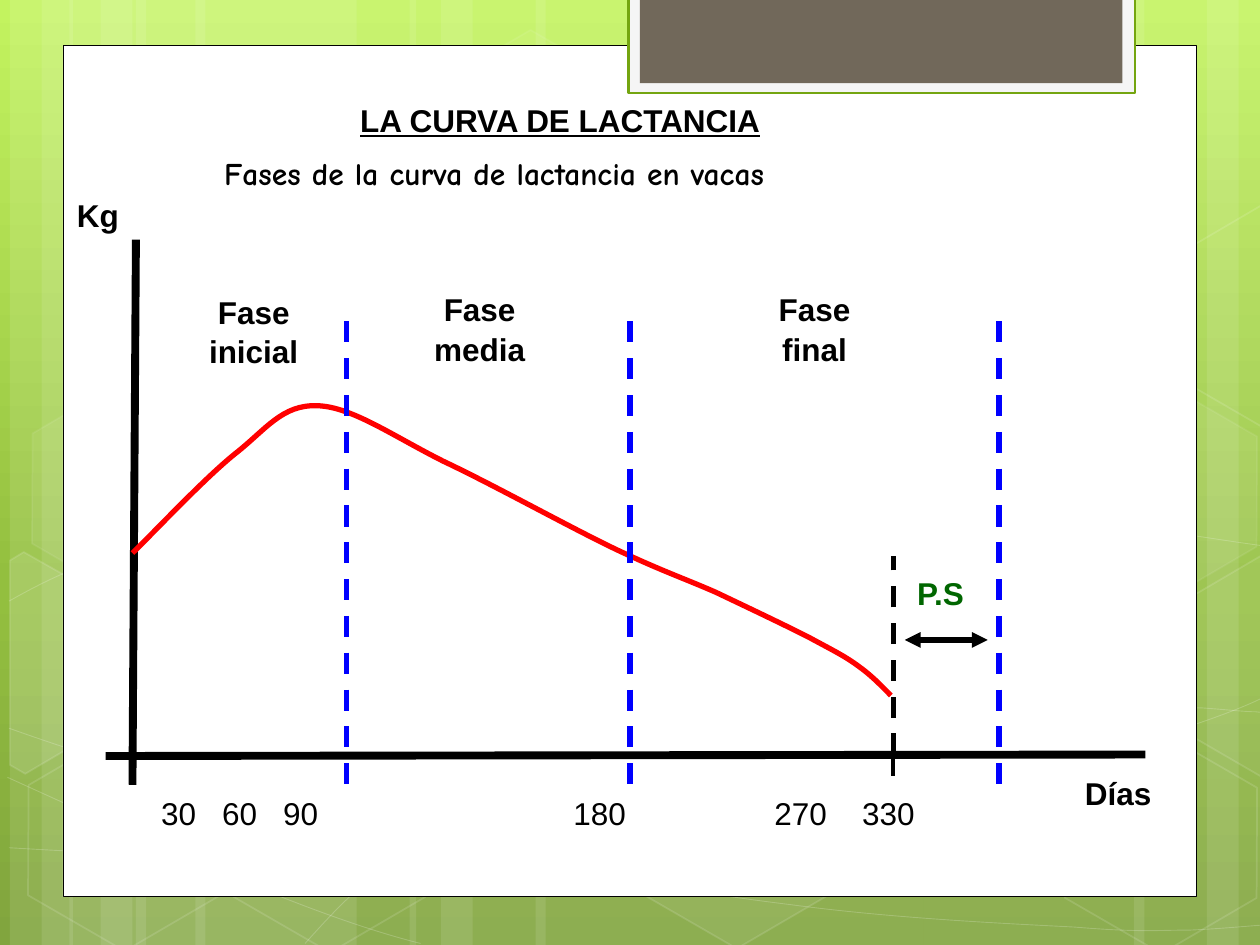
from copy import deepcopy

from lxml import etree
from pptx import Presentation
from pptx import util as u
from pptx.dml.color import RGBColor
from pptx.enum import dml, shapes, text
from pptx.oxml.ns import qn

INK = {
    "white": "FFFFFF", "black": "000000", "red": "FF0000", "blue": "0000FF",
    "green": "006600", "pale": "F5F5F5", "edge": "74A510", "stone": "71685A",
    "lime": "C3F35F", "leaf": "93BF3F", "moss": "81A53E",
}
HIGH = 19.05
BARS = [(2.74, 4.45), (0.2, 1.27), (0.84, 2.11), (3.94, 4.45), (1.4, 1.27),
        (2.03, 2.11), (18.62, 4.45), (24.33, 1.27), (22.86, 2.11),
        (10.8, 7.82), (8.26, 1.27), (8.89, 2.11)]
WAVES = [
    [(0.18, 17.09), (1.55, 17.17), (2.92, 17.25), (4.83, 17.22), (6.73, 17.2),
     (9.09, 17.15), (11.63, 16.89), (14.17, 16.64), (17.78, 16.15),
     (20.12, 15.67), (22.43, 15.19), (24.82, 14.43), (25.58, 14)],
    [(0.18, 12.12), (0.91, 11.71), (1.65, 11.33), (3.07, 10.95), (4.52, 10.57),
     (6.58, 9.98), (8.81, 9.83), (11.07, 9.68), (13.82, 9.63), (16.61, 9.83),
     (19.41, 10.03), (24.05, 10.82), (25.58, 11.02)],
    [(0.15, 15.67), (3.23, 17.07), (6.27, 18.47), (8.48, 19.02)],
    [(0.18, 14.68), (0.97, 14.96), (1.78, 15.24), (3.25, 15.65), (4.72, 16.03),
     (6.93, 16.66), (9.07, 17.09), (11.18, 17.53), (13.84, 17.98),
     (15.95, 18.24), (18.06, 18.52), (20.32, 18.62), (21.67, 18.69),
     (22.99, 18.8), (23.34, 18.75), (24, 18.75), (24.66, 18.72),
     (25.12, 18.67), (25.58, 18.64)],
    [(6.15, 19.02), (6.6, 18.52), (7.06, 18.01), (7.67, 17.55), (8.28, 17.09),
     (9.14, 16.59), (9.86, 16.23), (10.57, 15.88), (11, 15.72), (11.94, 15.47),
     (12.85, 15.21), (14.55, 14.86), (15.44, 14.68), (16.36, 14.5),
     (16.48, 14.5), (17.27, 14.45), (18.06, 14.38), (19.3, 14.27),
     (20.17, 14.27), (21.06, 14.25), (22.5, 14.27), (22.5, 14.27),
     (22.5, 14.27), (24.21, 14.27), (24.21, 14.27), (24.66, 14.3),
     (25.1, 14.35), (25.32, 14.35), (25.55, 14.38), (25.48, 14.35),
     (25.55, 14.38)],
]
HEXES = [(8.48, 0.91, 4, 8), (12.62, 14.96, 6, 12), (0.28, 15.01, 0, 12),
         (0.36, 7.92, 7, 8), (4.42, 15.04, 0, 12), (19.13, 11.51, 10, 12),
         (21.18, 15.06, 0, 12), (21.18, 7.98, 7, 8)]
CUTS = [
    (10, [(0.2, 11.3), (0.48, 11.13), (2.44, 12.24), (2.41, 14.48),
          (0.51, 15.6), (0.2, 15.42)]),
    (4, [(23.52, 12.32), (25.43, 11.2), (25.63, 11.33), (25.63, 15.57),
         (25.45, 15.67), (23.52, 14.55)]),
    (0, [(23.52, 5.26), (25.43, 4.14), (25.65, 4.27), (25.63, 8.51),
         (25.45, 8.61), (23.52, 7.49)]),
]
MILK = [(2.67, 11.15), (3.02, 10.82), (4.11, 9.65), (4.75, 9.14), (5.36, 8.66),
        (5.69, 8.15), (6.4, 8.18), (7.09, 8.2), (7.92, 8.79), (8.94, 9.3),
        (9.96, 9.78), (11.56, 10.67), (12.47, 11.1), (13.39, 11.53),
        (13.79, 11.66), (14.43, 11.94), (15.06, 12.24), (15.82, 12.6),
        (16.31, 12.85), (16.79, 13.11), (17.04, 13.23), (17.32, 13.44),
        (17.6, 13.64), (17.83, 13.89), (17.96, 14.02)]


def tint(fill, ink, alpha=100):
    if not alpha:
        fill.background()
        return
    fill.solid()
    fill.fore_color.rgb = RGBColor.from_string(INK[ink])
    if alpha < 100:
        hue = fill._xPr.find(qn("a:solidFill"))[0]
        etree.SubElement(hue, qn("a:alpha")).set("val", str(alpha * 1000))


def style(form, ink, alpha=100, edge=None, width=1, clear=100):
    form.shadow.inherit = False
    tint(form.fill, ink, alpha)
    if edge:
        form.line.width = u.Pt(width)
        tint(form.line.fill, edge, clear)
    else:
        form.line.fill.background()


def block(slide, kind, box, *look):
    form = slide.shapes.add_shape(kind, *map(u.Cm, box))
    style(form, *look)
    return form


def outline(slide, dots, close):
    first, *rest = [(u.Cm(x), u.Cm(y)) for x, y in dots]
    pen = slide.shapes.build_freeform(*first)
    pen.add_line_segments(rest, close=close)
    return pen.convert_to_shape()


def curve(slide, dots, *edge):
    form = outline(slide, dots, False)
    style(form, "white", 0, *edge)
    track = form._element.find(".//" + qn("a:path"))
    steps = track.findall(qn("a:lnTo"))
    for i in range(0, len(steps), 3):
        bend = etree.SubElement(track, qn("a:cubicBezTo"))
        for step in steps[i:i + 3]:
            bend.append(step[0])
            track.remove(step)


def line(slide, ends, ink, width, dash=False, heads=False):
    rule = slide.shapes.add_connector(shapes.MSO_CONNECTOR.STRAIGHT,
                                      *map(u.Cm, ends))
    tint(rule.line.fill, ink)
    rule.line.width = u.Pt(width)
    if dash:
        rule.line.dash_style = dml.MSO_LINE.DASH
    if heads:
        for end in ("a:headEnd", "a:tailEnd"):
            etree.SubElement(rule.line._ln, qn(end)).set("type", "triangle")
    etree.SubElement(rule._element.spPr, qn("a:effectLst"))


def label(slide, box, words, ink="black", font="Arial", bold=True,
          under=False, mid=False, tabs=()):
    frame = slide.shapes.add_textbox(*map(u.Cm, box)).text_frame
    frame.word_wrap = True
    para = frame.paragraphs[0]
    para.line_spacing = 1.05
    if mid:
        para.alignment = text.PP_ALIGN.CENTER
    if tabs:
        stops = etree.SubElement(para._p.get_or_add_pPr(), qn("a:tabLst"))
        for tab in tabs:
            stop = etree.SubElement(stops, qn("a:tab"))
            stop.set("pos", str(u.Cm(tab)))
            stop.set("algn", "l")
    run = para.add_run()
    run.text = words
    run.font.name = font
    run.font.size = u.Pt(18)
    run.font.bold = bold
    run.font.underline = under
    run.font.color.rgb = RGBColor.from_string(INK[ink])


def ground(slide):
    fill = slide.background.fill
    fill.gradient()
    fill.gradient_angle = 270
    stop = slide._element.find(".//" + qn("a:gs"))
    stop.addnext(deepcopy(stop))
    marks = [("lime", 0), ("leaf", 0.62), ("moss", 1)]
    for stop, (ink, place) in zip(fill.gradient_stops, marks):
        stop.color.rgb = RGBColor.from_string(INK[ink])
        stop.position = place


def decor(slide):
    kind = shapes.MSO_SHAPE
    for left, wide in BARS:
        block(slide, kind.RECTANGLE, (left, 0, wide, HIGH), "white", 10)
    for wave in WAVES:
        curve(slide, wave, "white", 0.5, 20)
    for left, top, alpha, clear in HEXES:
        form = block(slide, kind.HEXAGON, (left, top, 4.45, 3.86),
                     "white", alpha, "white", 1, clear)
        form.adjustments[0] = 0.285
        form.rotation = 30
    for alpha, dots in CUTS:
        style(outline(slide, dots, True), "white", alpha, "white", 1, 12)
    rect = kind.RECTANGLE
    block(slide, rect, (1.27, 0.91, 22.86, 17.17), "white", 100, "black", 0.5)
    block(slide, rect, (12.67, -0.05, 10.21, 1.93), "pale", 100, "edge", 1.25)
    block(slide, rect, (12.9, -0.05, 9.73, 1.73), "stone")


def graph(slide):
    line(slide, (18.01, 15.21, 18.01, 15.65), "black", 2.25)
    label(slide, (1.3, 3.78, 2.34, 1.27), "Kg")
    line(slide, (2.74, 4.83, 2.67, 15.82), "black", 4.5)
    line(slide, (2.13, 15.24, 23.09, 15.21), "black", 4.5)
    curve(slide, MILK, "red", 3)
    for x in (6.99, 20.14, 12.7):
        line(slide, (x, 6.48, x, 15.82), "blue", 3, dash=True)
    label(slide, (3, 15.85, 19.05, 1.27), "30\t60\t90\t180\t270\t330",
          bold=False, tabs=(1.23, 2.46, 8.31, 12.36, 14.13))
    label(slide, (21.62, 15.44, 2.97, 1.27), "Días")
    phases = [("inicial", 3.63, 5.74, 2.97), ("media", 8.08, 5.69, 3.18),
              ("final", 14.83, 5.69, 3.18)]
    for name, left, top, wide in phases:
        label(slide, (left, top, wide, 2.29), "Fase " + name, mid=True)
    line(slide, (18.01, 15.21, 18.01, 11.2), "black", 3, dash=True)
    line(slide, (18.24, 12.9, 19.91, 12.9), "black", 3, heads=True)
    label(slide, (18.24, 11.4, 2.34, 1.27), "P.S", "green")


def main():
    deck = Presentation()
    deck.slide_width, deck.slide_height = u.Cm(25.4), u.Cm(HIGH)
    slide = deck.slides.add_slide(deck.slide_layouts[6])
    ground(slide)
    decor(slide)
    label(slide, (7.01, 1.88, 12.7, 1.27), "LA CURVA DE LACTANCIA", under=True)
    label(slide, (4.27, 2.95, 17.58, 1.27),
          "Fases de la curva de lactancia en vacas", font="Comic Neue")
    graph(slide)
    deck.save("out.pptx")


if __name__ == "__main__":
    main()
